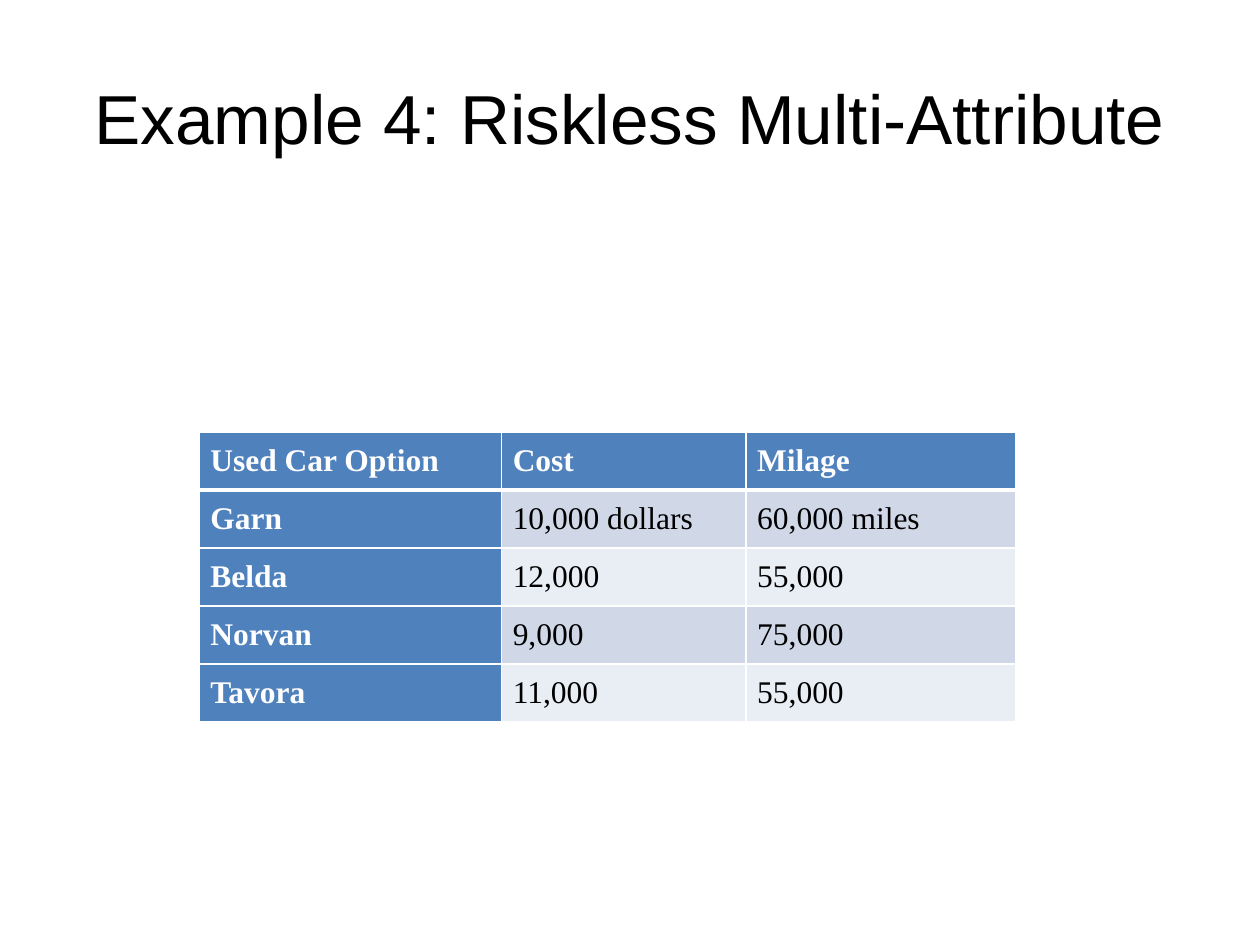
import pptx
import pptx.dml.color
import pptx.enum.text
import pptx.oxml.ns
import pptx.util
import lxml.etree

Inches = pptx.util.Inches
Pt = pptx.util.Pt
RGBColor = pptx.dml.color.RGBColor

BLACK = RGBColor(0x00, 0x00, 0x00)
WHITE = RGBColor(0xFF, 0xFF, 0xFF)
BLUE = RGBColor(0x4F, 0x81, 0xBD)
BANDS = (RGBColor(0xD0, 0xD8, 0xE8), RGBColor(0xE9, 0xED, 0xF4))

CAR_OPTIONS = (
    ("Used Car Option", "Cost", "Milage"),
    ("Garn", "10,000 dollars", "60,000 miles"),
    ("Belda", "12,000", "55,000"),
    ("Norvan", "9,000", "75,000"),
    ("Tavora", "11,000", "55,000"),
)


class SlideBuilder:
    title_font = "Arial"
    table_font = "Times New Roman"
    title_size = Pt(39.6)
    table_size = Pt(18)
    cell_margin = Inches(0.09)
    thin_line = Pt(1)
    thick_line = Pt(3)

    def __init__(self, presentation):
        self.slide = presentation.slides.add_slide(presentation.slide_layouts[5])

    def set_font(self, paragraph, name, size, color, bold=False):
        font = paragraph.font
        font.name, font.size, font.bold = name, size, bold
        font.color.rgb = color

    def add_title(self, text, left, top, width, height):
        title = self.slide.shapes.title
        title.left, title.top, title.width, title.height = left, top, width, height
        frame = title.text_frame
        frame.text = text
        frame.word_wrap = True
        frame.vertical_anchor = pptx.enum.text.MSO_ANCHOR.MIDDLE
        paragraph = frame.paragraphs[0]
        paragraph.alignment = pptx.enum.text.PP_ALIGN.CENTER
        self.set_font(paragraph, self.title_font, self.title_size, BLACK)

    def add_border(self, cell, side, width):
        qn = pptx.oxml.ns.qn
        properties = cell._tc.get_or_add_tcPr()
        line = lxml.etree.SubElement(properties, qn(f"a:ln{side}"), w=str(width))
        fill = lxml.etree.SubElement(line, qn("a:solidFill"))
        lxml.etree.SubElement(fill, qn("a:srgbClr"), val=str(WHITE))

    def format_cell(self, cell, text, row, column):
        is_heading = row == 0 or column == 0
        cell.text = text
        cell.margin_left = cell.margin_right = self.cell_margin
        cell.margin_top = cell.margin_bottom = self.cell_margin
        thick_side = {0: "B", 1: "T"}.get(row)
        for side in "LRTB":
            width = self.thick_line if side == thick_side else self.thin_line
            self.add_border(cell, side, width)
        cell.fill.solid()
        cell.fill.fore_color.rgb = BLUE if is_heading else BANDS[(row - 1) % 2]
        self.set_font(
            cell.text_frame.paragraphs[0], self.table_font, self.table_size,
            WHITE if is_heading else BLACK, is_heading,
        )

    def add_table(self, rows, left, top, column_widths, row_height):
        table = self.slide.shapes.add_table(
            len(rows), len(column_widths), left, top,
            sum(column_widths), row_height * len(rows),
        ).table
        table.first_col = True
        for column, width in zip(table.columns, column_widths):
            column.width = width
        for row, texts in enumerate(rows):
            for column, text in enumerate(texts):
                self.format_cell(table.cell(row, column), text, row, column)


def main():
    presentation = pptx.Presentation()
    presentation.slide_width = Inches(10)
    presentation.slide_height = Inches(7.5)
    builder = SlideBuilder(presentation)
    builder.add_title(
        "Example 4: Riskless Multi-Attribute",
        Inches(0.5), Inches(0.3), Inches(9), Inches(1.25),
    )
    builder.add_table(
        CAR_OPTIONS, Inches(1.58), Inches(3.43),
        (Inches(2.4), Inches(1.94), Inches(2.14)), Inches(0.46),
    )
    presentation.save("out.pptx")


if __name__ == "__main__":
    main()
